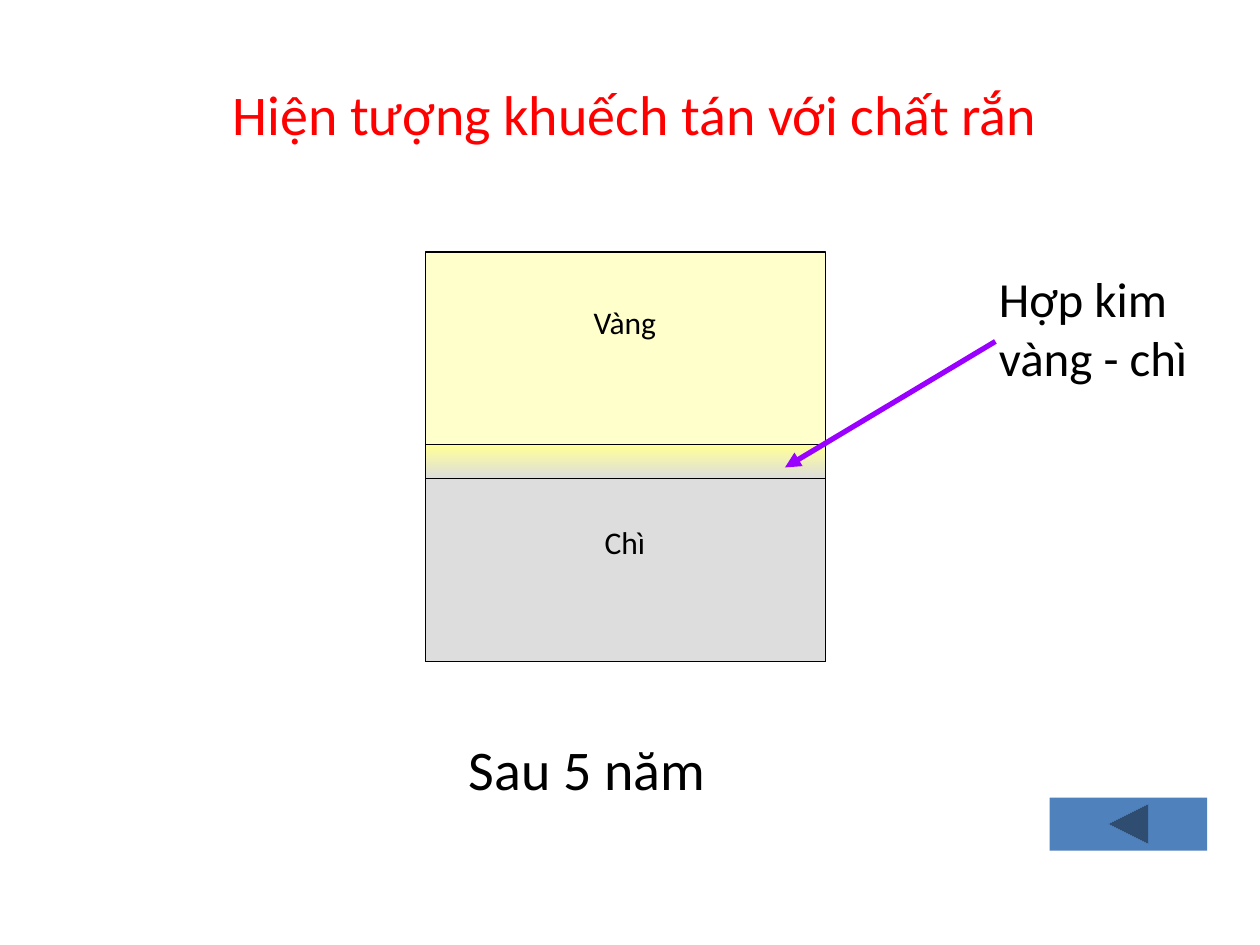
from lxml.etree import SubElement as Sub
from pptx import Presentation
from pptx.dml.color import RGBColor as RGB
from pptx.enum.shapes import MSO_CONNECTOR as Conn, MSO_SHAPE as Shape
from pptx.enum.text import MSO_ANCHOR as Anchor, MSO_AUTO_SIZE as Auto, PP_ALIGN as Align
from pptx.oxml.ns import qn
from pptx.util import Inches, Pt

HUES = {
    "black": "000000", "red": "FF0000", "purple": "9900FF", "blue": "4F81BD",
    "gold": "FFFFCC", "lead": "DDDDDD", "blend": "FFFF99",
}


def hue(name):
    return RGB.from_string(HUES[name])


def write(box, text, size, color="black", align=Align.LEFT):
    frame = box.text_frame
    frame.word_wrap = True
    frame.auto_size = Auto.NONE
    frame.vertical_anchor = Anchor.TOP
    par = frame.paragraphs[0]
    par.alignment = align
    run = par.add_run()
    run.text = text
    run.font.name = "Calibri"
    run.font.size = Pt(size)
    run.font.color.rgb = hue(color)


deck = Presentation()
deck.slide_width, deck.slide_height = Inches(10), Inches(7.5)
slide = deck.slides.add_slide(deck.slide_layouts[5])
shapes = slide.shapes

title = shapes.title
title.left, title.top = Inches(0.5), Inches(0.58)
title.width, title.height = Inches(9.08), Inches(0.63)
write(title, "Hiện tượng khuếch tán với chất rắn", 32, "red", Align.CENTER)

# Metal layers, with the mixed zone last so that it lies on top
for top, high, color in [(2, 3.25, "gold"), (3.62, 1.63, "lead"), (3.53, 0.27, None)]:
    layer = shapes.add_shape(Shape.RECTANGLE, Inches(3.38), Inches(top),
                             Inches(3.17), Inches(high))
    layer.shadow.inherit = False
    layer.line.color.rgb = hue("black")
    layer.line.width = Pt(0.75)
    if color:
        layer.fill.solid()
        layer.fill.fore_color.rgb = hue(color)
    else:
        layer.fill.gradient()
        layer.fill.gradient_angle = 270
        for stop, name in zip(layer.fill.gradient_stops, ("blend", "lead")):
            stop.color.rgb = hue(name)

for text, top in [("Vàng", 2.36), ("Chì", 4.1)]:
    name = shapes.add_textbox(Inches(4.28), Inches(top), Inches(1.36), Inches(0.4))
    write(name, text, 18, align=Align.CENTER)

arrow = shapes.add_connector(Conn.STRAIGHT, Inches(7.9), Inches(2.71),
                             Inches(6.23), Inches(3.71))
arrow.line.color.rgb = hue("purple")
arrow.line.width = Pt(3)
Sub(arrow.line._get_or_add_ln(), qn("a:tailEnd"), type="triangle")
Sub(arrow._element.spPr, qn("a:effectLst"))

alloy = shapes.add_textbox(Inches(7.83), Inches(2.08), Inches(2), Inches(1.03))
write(alloy, "Hợp kim vàng - chì", 28)

time = shapes.add_textbox(Inches(3.42), Inches(5.78), Inches(3.08), Inches(0.63))
write(time, "Sau 5 năm", 32)
time.text_frame.margin_left = Inches(0.3)

back = shapes.add_shape(Shape.ACTION_BUTTON_BACK_OR_PREVIOUS, Inches(8.33),
                        Inches(6.33), Inches(1.25), Inches(0.42))
back.shadow.inherit = False
back.fill.solid()
back.fill.fore_color.rgb = hue("blue")
back.line.fill.background()

deck.save("out.pptx")
